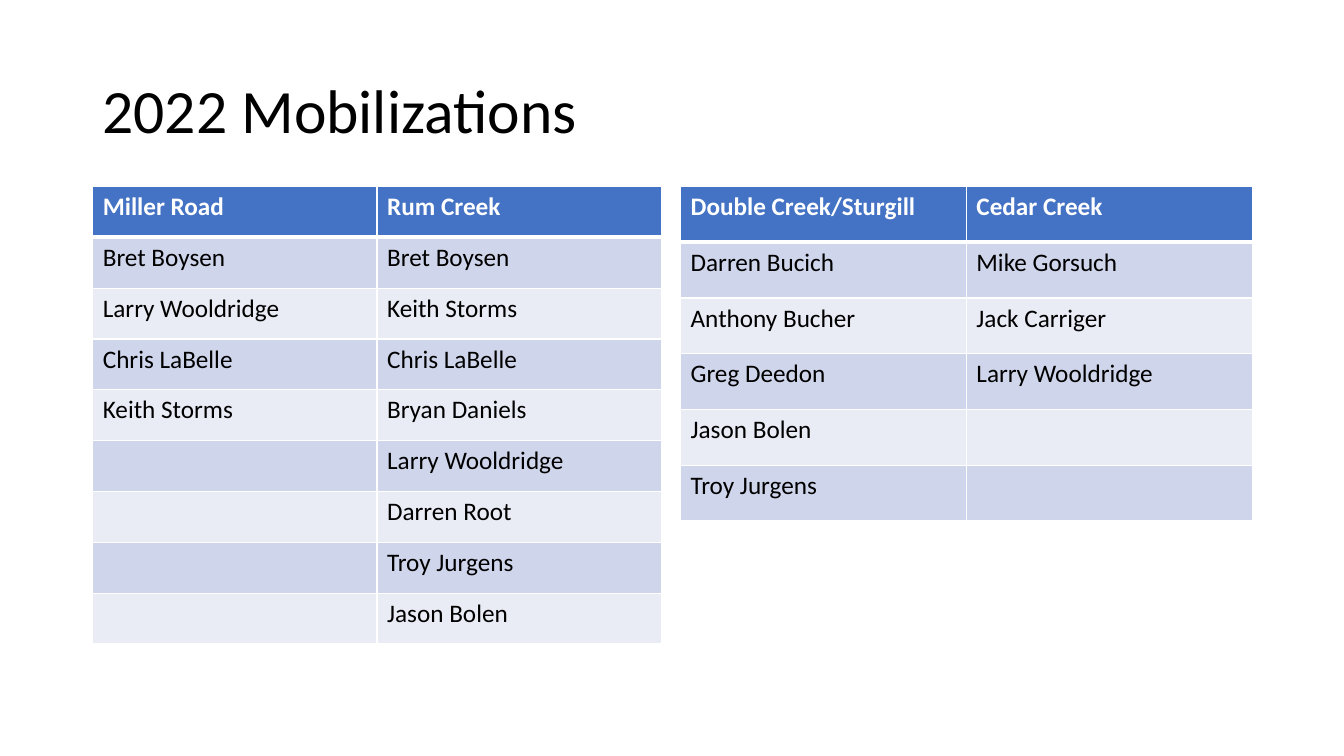
"""Build the 2022 mobilizations slide."""
from dataclasses import dataclass
from itertools import zip_longest

from lxml import etree
from pptx import Presentation
from pptx import util as u
from pptx.dml import color
from pptx.enum import text
from pptx.oxml import ns

PX = 9144


@dataclass(frozen=True)
class Theme:
    """Colours, font and type sizes of the slide."""
    font: str = "Calibri"
    title_size: int = 44
    table_size: int = 18
    ink: str = "000000"
    paper: str = "FFFFFF"
    header: str = "4472C4"
    bands: tuple = ("E9EBF5", "CFD5EA")
    rule: int = 1
    header_rule: int = 3


THEME = Theme()

LEFT_CREWS = {
    "Miller Road": ["Bret Boysen", "Larry Wooldridge", "Chris LaBelle", "Keith Storms"],
    "Rum Creek": ["Bret Boysen", "Keith Storms", "Chris LaBelle", "Bryan Daniels",
                  "Larry Wooldridge", "Darren Root", "Troy Jurgens", "Jason Bolen"],
}
RIGHT_CREWS = {
    "Double Creek/Sturgill": ["Darren Bucich", "Anthony Bucher", "Greg Deedon",
                              "Jason Bolen", "Troy Jurgens"],
    "Cedar Creek": ["Mike Gorsuch", "Jack Carriger", "Larry Wooldridge"],
}


def px(*lengths):
    """Turn pixel lengths into EMU."""
    return [u.Emu(length * PX) for length in lengths]


def style_font(font, size, shade, bold=False):
    """Set typeface, size, colour and weight."""
    font.name = THEME.font
    font.size = u.Pt(size)
    font.bold = bold
    font.color.rgb = color.RGBColor.from_string(shade)


def add_title(page, words, frame):
    """Add the slide title in a vertically centred text box."""
    box = page.shapes.add_textbox(*px(*frame))
    box.text_frame.word_wrap = True
    box.text_frame.vertical_anchor = text.MSO_ANCHOR.MIDDLE
    box.text_frame.text = words
    para = box.text_frame.paragraphs[0]
    para.line_spacing = 0.9
    style_font(para.runs[0].font, THEME.title_size, THEME.ink)


def add_borders(cell, top, bottom):
    """Draw the cell's four borders, with given top and bottom weights in points."""
    properties = cell._tc.get_or_add_tcPr()
    weights = {"lnL": THEME.rule, "lnR": THEME.rule, "lnT": top, "lnB": bottom}
    for side, weight in weights.items():
        line = etree.SubElement(properties, ns.qn(f"a:{side}"), w=str(u.Pt(weight)))
        fill = etree.SubElement(line, ns.qn("a:solidFill"))
        etree.SubElement(fill, ns.qn("a:srgbClr"), val=THEME.paper)


def style_cell(cell, row):
    """Format a cell as header or as part of a band, according to its row."""
    is_header = row == 0
    add_borders(cell,
                top=THEME.header_rule if row == 1 else THEME.rule,
                bottom=THEME.header_rule if is_header else THEME.rule)
    shade = THEME.header if is_header else THEME.bands[row % 2]
    cell.fill.solid()
    cell.fill.fore_color.rgb = color.RGBColor.from_string(shade)
    para = cell.text_frame.paragraphs[0]
    ink = THEME.paper if is_header else THEME.ink
    style_font(para.font, THEME.table_size, ink, is_header)
    for span in para.runs:
        style_font(span.font, THEME.table_size, ink, is_header)


def add_crew_table(page, crews, frame):
    """Add a table with one column of names per incident."""
    rows = [tuple(crews), *zip_longest(*crews.values(), fillvalue="")]
    table = page.shapes.add_table(len(rows), len(crews), *px(*frame)).table
    for row, names in enumerate(rows):
        for column, name in enumerate(names):
            cell = table.cell(row, column)
            if name:
                cell.text = name
            style_cell(cell, row)


def main():
    """Build and save the deck."""
    deck = Presentation()
    deck.slide_width, deck.slide_height = px(1333, 750)
    page = deck.slides.add_slide(deck.slide_layouts[6])
    add_title(page, "2022 Mobilizations", (92, 40, 1150, 145))
    add_crew_table(page, LEFT_CREWS, (92, 185, 564, 454))
    add_crew_table(page, RIGHT_CREWS, (675, 185, 567, 332))
    deck.save("out.pptx")


if __name__ == "__main__":
    main()
